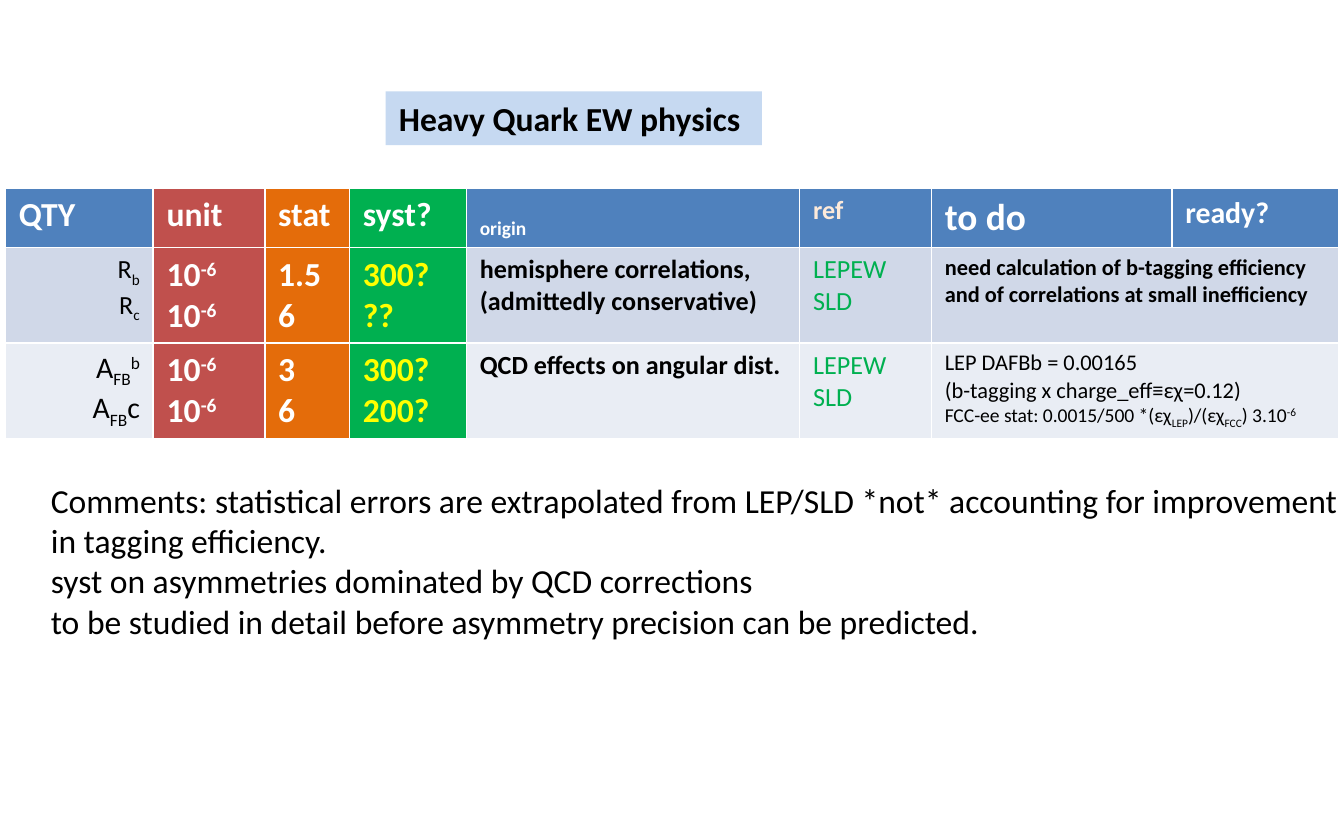
from lxml.etree import SubElement
from pptx import Presentation
from pptx.dml.color import RGBColor
from pptx.enum.shapes import MSO_SHAPE
from pptx.enum.text import MSO_AUTO_SIZE, PP_ALIGN
from pptx.oxml.ns import qn
from pptx.util import Inches, Pt

COLORS = {
    "white": "FFFFFF", "black": "000000", "blue": "4F81BD", "red": "C0504D",
    "orange": "E46C0A", "green": "00B050", "yellow": "FFFF00",
    "cream": "FDEADA", "title": "C6D9F1", "band 1": "D0D8E8", "band 2": "E9EDF4",
}
FONT = "Calibri"
COLUMN_WIDTHS = [1.1, 0.83, 0.63, 0.87, 2.48, 0.98, 1.79, 1.24]
ROW_HEIGHTS = [0.43, 0.7, 0.71]
# Fills of the columns that keep one colour in all rows
COLUMN_FILLS = {1: "red", 2: "orange", 3: "green"}
ROW_FILLS = ["blue", "band 1", "band 2"]


def sub(text):
    return text, -25


def sup(text):
    return text, 30


def color(name):
    return RGBColor.from_string(COLORS[name])


def style_run(run, size, color_name, bold, baseline=0):
    run.font.name = FONT
    run.font.size = Pt(size)
    run.font.bold = bold
    run.font.color.rgb = color(color_name)
    if baseline:
        run.font._element.set("baseline", str(baseline * 1000))


def add_break(paragraph, size):
    """Break the line at the height of the surrounding text."""
    paragraph.add_line_break()
    line_break = paragraph._p.findall(qn("a:br"))[-1]
    SubElement(line_break, qn("a:rPr"), sz=str(int(size * 100)))


def write(text_frame, paragraphs, size, color_name="black", bold=False,
          align=PP_ALIGN.LEFT):
    """Each paragraph is a string, or a list of strings and sub/sup pieces.

    A pair (pieces, size) in a dict entry overrides the size of one paragraph.
    """
    for index, content in enumerate(paragraphs):
        paragraph = text_frame.paragraphs[0] if index == 0 else text_frame.add_paragraph()
        paragraph.alignment = align
        run_size = size
        if isinstance(content, dict):
            content, run_size = content["pieces"], content["size"]
        for piece in [content] if isinstance(content, str) else content:
            text, baseline = (piece, 0) if isinstance(piece, str) else piece
            for line_number, line in enumerate(text.split("\n")):
                if line_number:
                    add_break(paragraph, run_size)
                if line:
                    run = paragraph.add_run()
                    run.text = line
                    style_run(run, run_size, color_name, bold, baseline)


def table_rows():
    """Cells as (paragraphs, size, colour, bold[, alignment])."""
    power = ["10", sup("-6")]
    units = ([power, power], 18, "white", True)
    references = (["LEPEW\nSLD"], 14, "green", False)
    header = [([label], 18, "white", True) for label in ("QTY", "unit", "stat", "syst?")]
    header += [
        ([[sub("origin")]], 18, "white", True),
        (["ref"], 14, "cream", True),
        (["to do"], 20, "white", True),
        (["ready?"], 16, "white", True),
    ]
    ratios = [
        ([["R", sub("b")], ["R", sub("c")]], 14, "black", False, PP_ALIGN.RIGHT),
        units,
        (["1.5", "6"], 18, "white", True),
        (["300?", "??"], 18, "yellow", True),
        (["hemisphere correlations, \n(admittedly conservative)"], 14, "black", True),
        references,
        (["need calculation of b-tagging efficiency and of correlations "
          "at small inefficiency"], 12, "black", True),
    ]
    fcc_estimate = ["FCC-ee stat: 0.0015/500 *(εχ", sub("LEP"), ")/(εχ", sub("FCC"),
                    ") 3.10", sup("-6")]
    asymmetries = [
        ([["A", sub("FB"), sup("b\n"), "A", sub("FB"), "c"]],
         16, "black", False, PP_ALIGN.RIGHT),
        units,
        (["3", "6"], 18, "white", True),
        (["300?", "200?"], 18, "yellow", True),
        (["QCD effects on angular dist."], 14, "black", True),
        references,
        (["LEP DAFBb = 0.00165", "(b-tagging x charge_eff≡εχ=0.12)",
          {"pieces": fcc_estimate, "size": 10.5}], 12, "black", False),
    ]
    return [header, ratios, asymmetries]


def add_title(slide):
    shape = slide.shapes.add_shape(
        MSO_SHAPE.RECTANGLE, Inches(2.87), Inches(0.68), Inches(2.8), Inches(0.4))
    shape.shadow.inherit = False
    shape.fill.solid()
    shape.fill.fore_color.rgb = color("title")
    shape.line.fill.background()
    shape.text_frame.word_wrap = False
    write(shape.text_frame, ["Heavy Quark EW physics"], 18, bold=True)


def add_quantity_table(slide):
    table = slide.shapes.add_table(
        len(ROW_HEIGHTS), len(COLUMN_WIDTHS), Inches(0.04), Inches(1.4),
        Inches(sum(COLUMN_WIDTHS)), Inches(sum(ROW_HEIGHTS))).table
    for column, width in zip(table.columns, COLUMN_WIDTHS):
        column.width = Inches(width)
    for row, height in zip(table.rows, ROW_HEIGHTS):
        row.height = Inches(height)

    # The body's last two columns form one cell
    for row_index in (1, 2):
        table.cell(row_index, 6).merge(table.cell(row_index, 7))

    for row_index, cells in enumerate(table_rows()):
        for column_index, content in enumerate(cells):
            cell = table.cell(row_index, column_index)
            cell.fill.solid()
            cell.fill.fore_color.rgb = color(
                COLUMN_FILLS.get(column_index, ROW_FILLS[row_index]))
            write(cell.text_frame, *content)


def add_comments(slide):
    box = slide.shapes.add_textbox(Inches(0.28), Inches(3.52), Inches(9.95), Inches(1.62))
    box.text_frame.word_wrap = False
    box.text_frame.auto_size = MSO_AUTO_SIZE.SHAPE_TO_FIT_TEXT
    write(box.text_frame, [
        "Comments: statistical errors are extrapolated from LEP/SLD *not* "
        "accounting for improvement",
        "in tagging efficiency.",
        "syst on asymmetries dominated by QCD corrections",
        "to be studied in detail before asymmetry precision can be predicted.",
    ], 18)


def main():
    presentation = Presentation()
    presentation.slide_width = Inches(10)
    presentation.slide_height = Inches(6.25)
    slide = presentation.slides.add_slide(presentation.slide_layouts[6])
    add_quantity_table(slide)
    add_title(slide)
    add_comments(slide)
    presentation.save("out.pptx")


if __name__ == "__main__":
    main()
